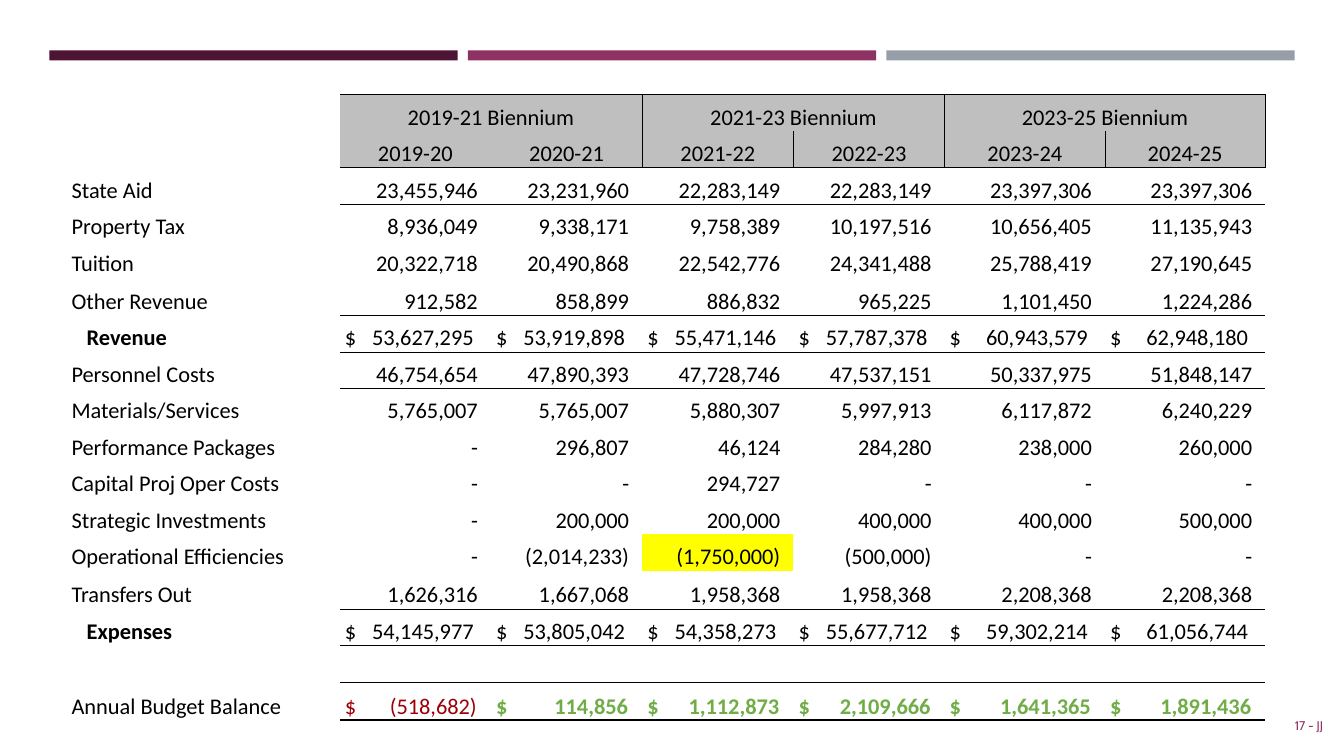
"""Build a slide with a six-year budget table grouped by biennium."""
from dataclasses import dataclass
from enum import Enum

from lxml.etree import SubElement
from pptx import Presentation
from pptx.dml.color import RGBColor
from pptx.enum.shapes import MSO_SHAPE
from pptx.enum.text import MSO_ANCHOR, PP_ALIGN
from pptx.oxml.ns import qn
from pptx.slide import Slide
from pptx.table import Table, _Cell
from pptx.text.text import _Paragraph
from pptx.util import Inches, Pt


@dataclass(frozen=True)
class Theme:
    """Colours, fonts and type sizes."""
    ink: str = "000000"
    header: str = "BFBFBF"
    highlight: str = "FFFF00"
    deficit: str = "9C0006"
    surplus: str = "70AD47"
    accent: str = "903163"
    stripes: tuple[str, ...] = ("4D1434", "903163", "969FA7")
    table_font: str = "Calibri"
    footer_font: str = "Cabin"
    table_size: float = 16
    footer_size: float = 9
    thin: float = 0.5
    thick: float = 2


class Kind(Enum):
    """Role of a budget row."""
    ITEM = "item"
    LAST_ITEM = "last item"
    TOTAL = "total"
    SPACER = "spacer"
    BALANCE = "balance"


@dataclass(frozen=True)
class BudgetRow:
    """One labelled line of yearly amounts."""
    label: str
    amounts: str
    kind: Kind = Kind.ITEM
    highlighted_year: int = 0


THEME = Theme()
BIENNIA = ("2019-21 Biennium", "2021-23 Biennium", "2023-25 Biennium")
YEARS = ("2019-20", "2020-21", "2021-22", "2022-23", "2023-24", "2024-25")
BUDGET = (
    BudgetRow("State Aid", "23,455,946 23,231,960 22,283,149 22,283,149 23,397,306 23,397,306"),
    BudgetRow("Property Tax", "8,936,049 9,338,171 9,758,389 10,197,516 10,656,405 11,135,943"),
    BudgetRow("Tuition", "20,322,718 20,490,868 22,542,776 24,341,488 25,788,419 27,190,645"),
    BudgetRow("Other Revenue", "912,582 858,899 886,832 965,225 1,101,450 1,224,286", Kind.LAST_ITEM),
    BudgetRow("Revenue", "53,627,295 53,919,898 55,471,146 57,787,378 60,943,579 62,948,180", Kind.TOTAL),
    BudgetRow("Personnel Costs", "46,754,654 47,890,393 47,728,746 47,537,151 50,337,975 51,848,147"),
    BudgetRow("Materials/Services", "5,765,007 5,765,007 5,880,307 5,997,913 6,117,872 6,240,229"),
    BudgetRow("Performance Packages", "- 296,807 46,124 284,280 238,000 260,000"),
    BudgetRow("Capital Proj Oper Costs", "- - 294,727 - - -"),
    BudgetRow("Strategic Investments", "- 200,000 200,000 400,000 400,000 500,000"),
    BudgetRow("Operational Efficiencies", "- (2,014,233) (1,750,000) (500,000) - -", highlighted_year=3),
    BudgetRow("Transfers Out", "1,626,316 1,667,068 1,958,368 1,958,368 2,208,368 2,208,368", Kind.LAST_ITEM),
    BudgetRow("Expenses", "54,145,977 53,805,042 54,358,273 55,677,712 59,302,214 61,056,744", Kind.TOTAL),
    BudgetRow("", "", Kind.SPACER),
    BudgetRow("Annual Budget Balance", "(518,682) 114,856 1,112,873 2,109,666 1,641,365 1,891,436", Kind.BALANCE),
)
HEADER_ROWS = 2
COLUMN_WIDTHS = (2.66, 1.5, 1.5, 1.5, 1.5, 1.59, 1.59)
TABLE_HEIGHT = 6.21
TALL_ROW = 0.38
NO_STYLE = "{2D5ABB26-0587-4C30-8999-92F81FD0307C}"
TOTAL_INDENT = 0.15
DOLLAR_INDENT = 0.05
AMOUNT_GAP = {Kind.ITEM: 0.13, Kind.LAST_ITEM: 0.13, Kind.TOTAL: 0.17, Kind.BALANCE: 0.14}
RULES = {
    Kind.ITEM: {},
    Kind.LAST_ITEM: {"B": THEME.thin},
    Kind.TOTAL: {"T": THEME.thin, "B": THEME.thin},
    Kind.SPACER: {"T": THEME.thin, "B": THEME.thin},
    Kind.BALANCE: {"T": THEME.thin, "B": THEME.thick},
}


def format_text(paragraph: _Paragraph, font: str, size: float, color: str, bold: bool = False) -> None:
    """Apply one type style to every run."""
    for run in paragraph.runs:
        run.font.name, run.font.size, run.font.bold = font, Pt(size), bold
        run.font.color.rgb = RGBColor.from_string(color)


def rule_cell(cell: _Cell, rules: dict[str, float]) -> None:
    """Draw cell borders from widths keyed by side."""
    properties = cell._tc.get_or_add_tcPr()
    for side in "LRTB":
        if side in rules:
            line = SubElement(properties, qn(f"a:ln{side}"), w=str(Pt(rules[side])))
            SubElement(SubElement(line, qn("a:solidFill")), qn("a:srgbClr"), val=THEME.ink)


def fill_cell(cell: _Cell, text: str, align: PP_ALIGN = PP_ALIGN.LEFT, color: str = THEME.ink,
              bold: bool = False, fill: str = "") -> None:
    """Set the text, alignment and fill of a cell."""
    cell.margin_left = cell.margin_right = cell.margin_top = cell.margin_bottom = 0
    cell.vertical_anchor = MSO_ANCHOR.BOTTOM
    cell.text_frame.text = text
    paragraph = cell.text_frame.paragraphs[0]
    paragraph.alignment = align
    format_text(paragraph, THEME.table_font, THEME.table_size, color, bold)
    if fill:
        cell.fill.solid()
        cell.fill.fore_color.rgb = RGBColor.from_string(fill)
    else:
        cell.fill.background()


def add_header(table: Table) -> None:
    """Fill the biennium and year rows."""
    for row in range(HEADER_ROWS):
        fill_cell(table.cell(row, 0), "")
    for column, year in enumerate(YEARS, start=1):
        opens_biennium = column % 2 == 1
        sides = {"L": THEME.thin} if opens_biennium and column > 1 else {}
        if not opens_biennium:
            sides = {"R": THEME.thin}
        biennium_cell, year_cell = table.cell(0, column), table.cell(1, column)
        rule_cell(biennium_cell, sides | {"T": THEME.thin, "R": THEME.thin})
        rule_cell(year_cell, sides | {"B": THEME.thin})
        biennium = BIENNIA[column // 2] if opens_biennium else ""
        fill_cell(biennium_cell, biennium, PP_ALIGN.CENTER, fill=THEME.header)
        fill_cell(year_cell, year, PP_ALIGN.CENTER, fill=THEME.header)
        if opens_biennium:
            biennium_cell.merge(table.cell(0, column + 1))


def add_amount(cell: _Cell, amount: str, budget: BudgetRow, column: int) -> None:
    """Fill one yearly amount, with a dollar sign on totals and balances."""
    fill = THEME.highlight if column == budget.highlighted_year else ""
    gap = AMOUNT_GAP[budget.kind]
    if budget.kind in (Kind.ITEM, Kind.LAST_ITEM):
        fill_cell(cell, amount, PP_ALIGN.RIGHT, fill=fill)
        cell.margin_right = Inches(gap)
        return
    color, bold = THEME.ink, False
    if budget.kind is Kind.BALANCE:
        bold = not amount.startswith("(")
        color = THEME.surplus if bold else THEME.deficit
    fill_cell(cell, f"$\t{amount}", color=color, bold=bold)
    cell.margin_left = Inches(DOLLAR_INDENT)
    stop = Inches(COLUMN_WIDTHS[column] - DOLLAR_INDENT - gap)
    paragraph_properties = cell.text_frame.paragraphs[0]._p.get_or_add_pPr()
    tabs = SubElement(paragraph_properties, qn("a:tabLst"))
    SubElement(tabs, qn("a:tab"), pos=str(stop), algn="r")


def add_budget_row(table: Table, row: int, budget: BudgetRow) -> None:
    """Fill one budget row with its label, rules and amounts."""
    is_total = budget.kind is Kind.TOTAL
    label = table.cell(row, 0)
    fill_cell(label, budget.label, bold=is_total)
    if is_total:
        label.margin_left = Inches(TOTAL_INDENT)
    amounts = budget.amounts.split()
    follows_rule = row == HEADER_ROWS or BUDGET[row - HEADER_ROWS - 1].kind is Kind.TOTAL
    top = {"T": THEME.thin} if follows_rule else {}
    for column in range(1, len(COLUMN_WIDTHS)):
        cell = table.cell(row, column)
        rule_cell(cell, top | RULES[budget.kind])
        if amounts:
            add_amount(cell, amounts[column - 1], budget, column)
        else:
            fill_cell(cell, "")


def add_budget_table(slide: Slide) -> None:
    """Place the whole budget table."""
    row_count = HEADER_ROWS + len(BUDGET)
    frame = slide.shapes.add_table(row_count, len(COLUMN_WIDTHS), Inches(0.71), Inches(0.94),
                                   Inches(sum(COLUMN_WIDTHS)), Inches(TABLE_HEIGHT))
    table = frame.table
    table.first_row = table.horz_banding = False
    table._tbl.tblPr.find(qn("a:tableStyleId")).text = NO_STYLE
    for column, width in zip(table.columns, COLUMN_WIDTHS):
        column.width = Inches(width)
    tall_kinds = (Kind.LAST_ITEM, Kind.BALANCE)
    tall_count = sum(budget.kind in tall_kinds for budget in BUDGET)
    normal_row = (TABLE_HEIGHT - tall_count * TALL_ROW) / (row_count - tall_count)
    for row in table.rows:
        row.height = Inches(normal_row)
    add_header(table)
    for row, budget in enumerate(BUDGET, start=HEADER_ROWS):
        if budget.kind in tall_kinds:
            table.rows[row].height = Inches(TALL_ROW)
        add_budget_row(table, row, budget)


def add_stripes(slide: Slide) -> None:
    """Draw the three stripes across the top."""
    for index, color in enumerate(THEME.stripes):
        stripe = slide.shapes.add_shape(MSO_SHAPE.RECTANGLE, Inches(0.49 + 4.15 * index), Inches(0.5),
                                        Inches(4.05), Inches(0.1))
        stripe.shadow.inherit = False
        stripe.fill.solid()
        stripe.fill.fore_color.rgb = RGBColor.from_string(color)
        stripe.line.fill.background()


def add_page_mark(slide: Slide) -> None:
    """Write the page number at the lower right."""
    page_mark = slide.shapes.add_textbox(Inches(12.07), Inches(7), Inches(1.15), Inches(0.4)).text_frame
    page_mark.word_wrap = True
    page_mark.vertical_anchor = MSO_ANCHOR.MIDDLE
    page_mark.text = "17 - JJ"
    page_mark.paragraphs[0].alignment = PP_ALIGN.RIGHT
    format_text(page_mark.paragraphs[0], THEME.footer_font, THEME.footer_size, THEME.accent)


def main() -> None:
    """Build and save the presentation."""
    presentation = Presentation()
    presentation.slide_width, presentation.slide_height = Inches(13.33), Inches(7.5)
    slide = presentation.slides.add_slide(presentation.slide_layouts[6])
    add_stripes(slide)
    add_budget_table(slide)
    add_page_mark(slide)
    presentation.save("out.pptx")


if __name__ == "__main__":
    main()
